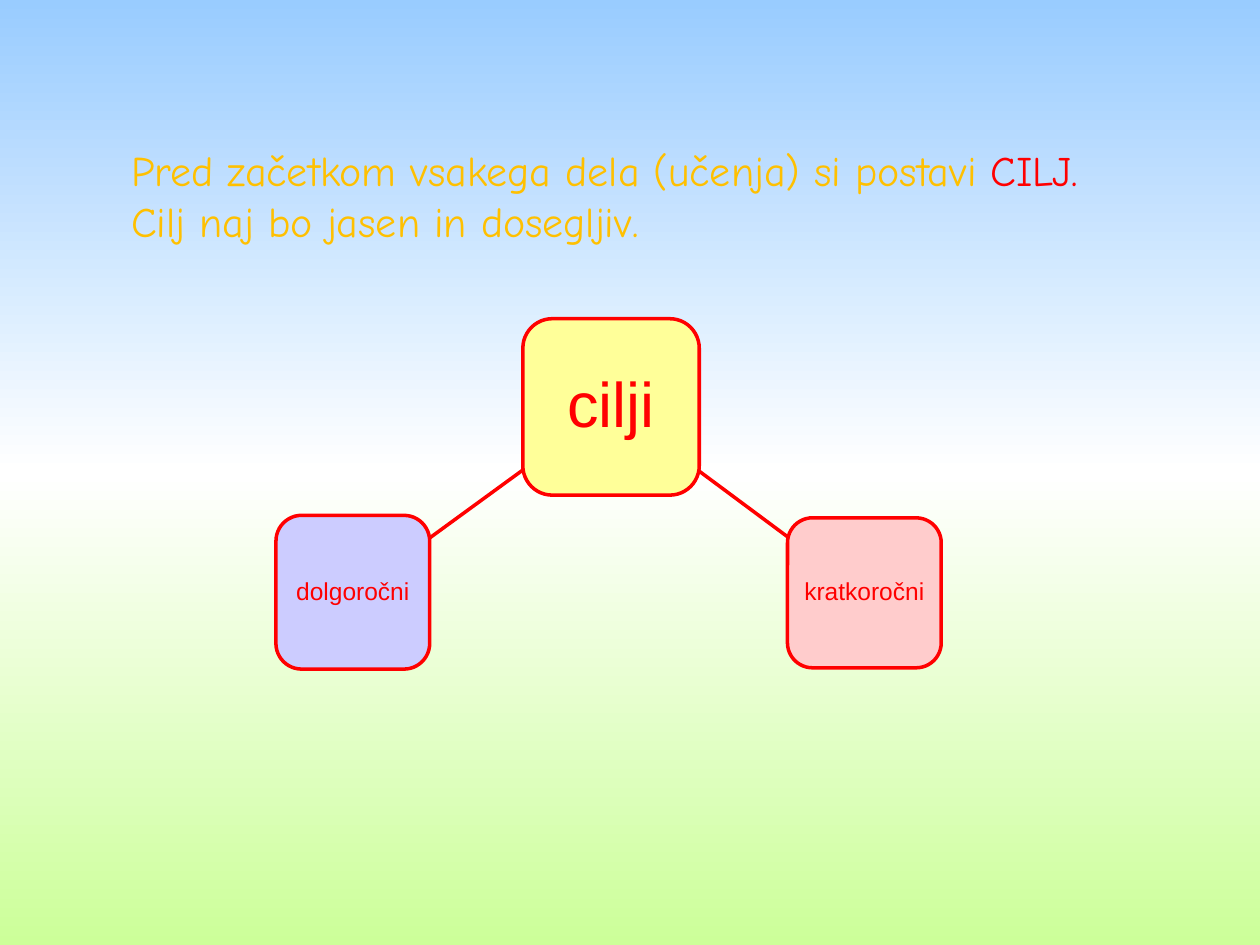
"""Build a slide on setting goals, with a small tree of goal types."""
from copy import deepcopy
from dataclasses import dataclass

from lxml import etree
from pptx import Presentation
from pptx.dml.color import RGBColor
from pptx.enum.shapes import MSO_CONNECTOR, MSO_SHAPE
from pptx.enum.text import MSO_ANCHOR, MSO_AUTO_SIZE, PP_ALIGN
from pptx.oxml.ns import qn
from pptx.util import Inches, Pt

ROUNDED = MSO_SHAPE.ROUNDED_RECTANGLE
STRAIGHT = MSO_CONNECTOR.STRAIGHT
TOP, MIDDLE = MSO_ANCHOR.TOP, MSO_ANCHOR.MIDDLE
LEFT, CENTER = PP_ALIGN.LEFT, PP_ALIGN.CENTER
NO_AUTOFIT = MSO_AUTO_SIZE.NONE
TITLE_ONLY = 5


@dataclass(frozen=True)
class Theme:
    """Colours, fonts and sizes of the slide."""
    sky: str = "99CCFF"
    horizon: str = "FFFFFF"
    grass: str = "CCFF99"
    advice: str = "FFC000"
    accent: str = "FF0000"
    root_fill: str = "FFFF99"
    long_fill: str = "CCCCFF"
    short_fill: str = "FFCCCC"
    advice_font: str = "Comic Neue"
    goal_font: str = "Arial"
    advice_size: int = 24
    root_size: int = 36
    branch_size: int = 14
    line_width: int = 2


@dataclass(frozen=True)
class Goal:
    """A box of the goal tree, in inches."""
    label: str
    left: float
    top: float
    width: float
    height: float
    fill: str
    size: int
    inset: float


@dataclass(frozen=True)
class Branch:
    """A line of the goal tree, in inches."""
    start: tuple[float, float]
    end: tuple[float, float]


THEME = Theme()
GOALS = (
    Goal("cilji", 4.15, 2.53, 1.4, 1.4, THEME.root_fill, THEME.root_size, 0.1),
    Goal("kratkoročni", 6.25, 4.11, 1.22, 1.19, THEME.short_fill, THEME.branch_size, 0.04),
    Goal("dolgoročni", 2.19, 4.09, 1.22, 1.22, THEME.long_fill, THEME.branch_size, 0.04),
)
BRANCHES = (Branch((5.55, 3.74), (6.25, 4.26)), Branch((4.15, 3.73), (3.41, 4.27)))
ADVICE = (
    ("Pred začetkom vsakega dela (učenja) si postavi ", THEME.advice),
    ("CILJ. ", THEME.accent),
    ("Cilj naj bo jasen in dosegljiv.", THEME.advice),
)


def rgb(code: str) -> RGBColor:
    """Turn a hex code into a colour."""
    return RGBColor.from_string(code)


def write(paragraph, text: str, *, font: str, size: int, color: str) -> None:
    """Add a formatted run to a paragraph."""
    run = paragraph.add_run()
    run.text = text
    run.font.name = font
    run.font.size = Pt(size)
    run.font.color.rgb = rgb(color)


def paint_background(slide) -> None:
    """Fill the background with a vertical gradient."""
    fill = slide.background.fill
    fill.gradient()
    fill.gradient_angle = 270
    stops = slide.element.find(".//" + qn("a:gsLst"))
    stops.insert(1, deepcopy(stops[0]))
    colors = (THEME.sky, THEME.horizon, THEME.grass)
    for stop, color, position in zip(fill.gradient_stops, colors, (0, 0.5, 1)):
        stop.color.rgb = rgb(color)
        stop.position = position


def write_advice(title) -> None:
    """Place the advice in the title placeholder."""
    title.left, title.top = Inches(0.94), Inches(1.1)
    title.width, title.height = Inches(8.19), Inches(2.09)
    frame = title.text_frame
    frame.word_wrap = True
    frame.auto_size = NO_AUTOFIT
    frame.vertical_anchor = TOP
    paragraph = frame.paragraphs[0]
    paragraph.alignment = LEFT
    for text, color in ADVICE:
        write(paragraph, text, font=THEME.advice_font, size=THEME.advice_size, color=color)


def outline(line) -> None:
    """Give a line the accent colour and width."""
    line.color.rgb = rgb(THEME.accent)
    line.width = Pt(THEME.line_width)


def draw_branch(slide, branch: Branch) -> None:
    """Draw a line between two goals."""
    points = (Inches(value) for value in branch.start + branch.end)
    connector = slide.shapes.add_connector(STRAIGHT, *points)
    outline(connector.line)
    etree.SubElement(connector.element.spPr, qn("a:effectLst"))


def draw_goal(slide, goal: Goal) -> None:
    """Draw a rounded box with its label."""
    box = (Inches(value) for value in (goal.left, goal.top, goal.width, goal.height))
    shape = slide.shapes.add_shape(ROUNDED, *box)
    shape.shadow.inherit = False
    shape.fill.solid()
    shape.fill.fore_color.rgb = rgb(goal.fill)
    outline(shape.line)
    frame = shape.text_frame
    frame.word_wrap = True
    frame.vertical_anchor = MIDDLE
    frame.margin_left = frame.margin_right = Inches(goal.inset)
    frame.margin_top = frame.margin_bottom = Inches(goal.inset)
    paragraph = frame.paragraphs[0]
    paragraph.alignment = CENTER
    paragraph.line_spacing = 0.9
    write(paragraph, goal.label, font=THEME.goal_font, size=goal.size, color=THEME.accent)


def main() -> None:
    """Build and save the slide."""
    deck = Presentation()
    deck.slide_width, deck.slide_height = Inches(10), Inches(7.5)
    slide = deck.slides.add_slide(deck.slide_layouts[TITLE_ONLY])
    paint_background(slide)
    write_advice(slide.shapes.title)
    for branch in BRANCHES:
        draw_branch(slide, branch)
    for goal in GOALS:
        draw_goal(slide, goal)
    deck.save("out.pptx")


if __name__ == "__main__":
    main()
